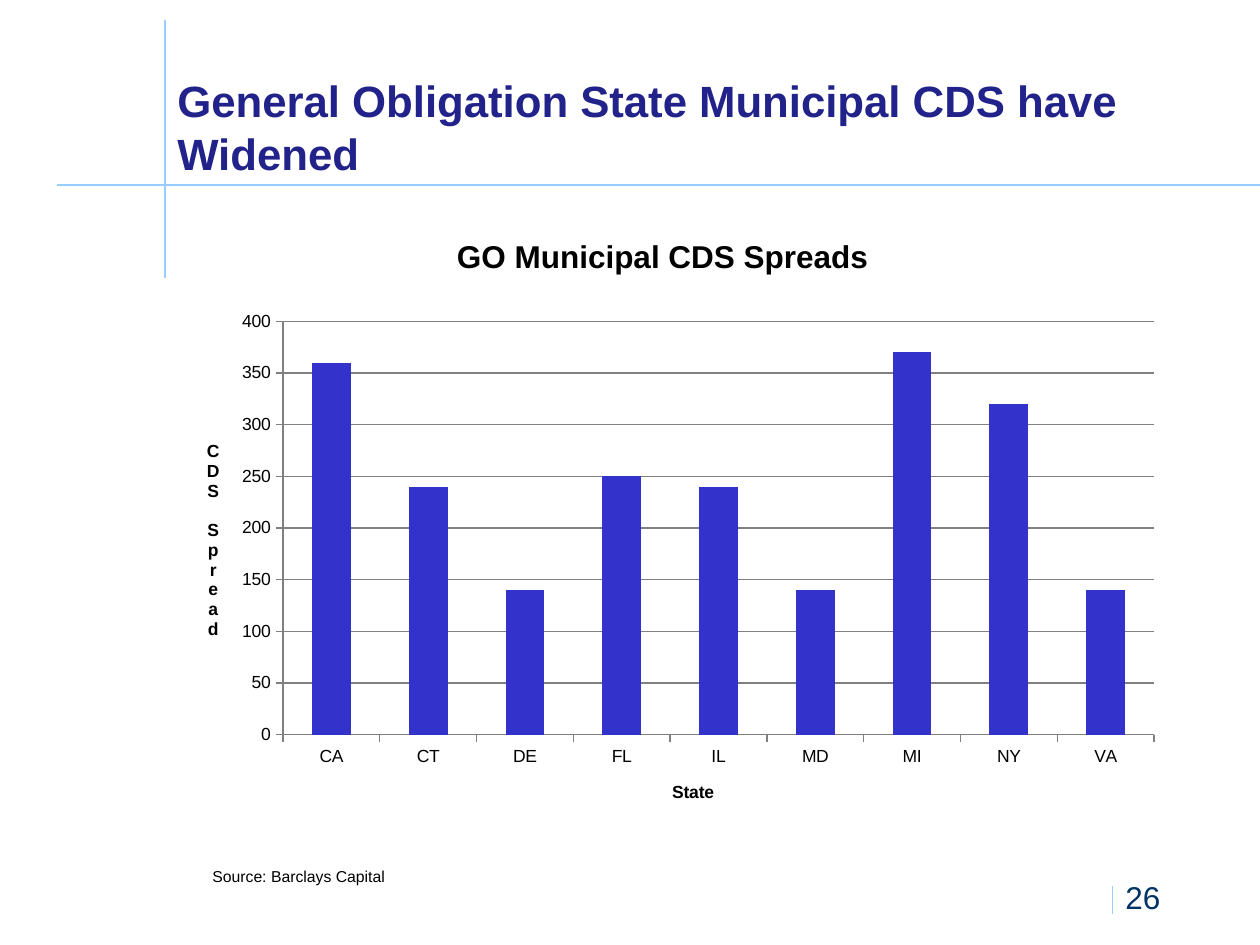
from lxml import etree
from pptx import Presentation
from pptx import util as u
from pptx.chart.data import CategoryChartData
from pptx.dml.color import RGBColor
from pptx.enum import chart as ch, shapes, text
from pptx.oxml import parse_xml
from pptx.oxml.ns import qn

SCALE = 914400 / 126
FONT = "Arial"
SKY = RGBColor(0x99, 0xCC, 0xFF)
NAVY = RGBColor(0x22, 0x22, 0x8B)
TEAL = RGBColor(0x00, 0x33, 0x66)
BLUE = RGBColor(0x33, 0x33, 0xCC)
GREY = RGBColor(0x80, 0x80, 0x80)
BLACK = RGBColor(0, 0, 0)
SPREADS = {"CA": 360, "CT": 240, "DE": 140, "FL": 250, "IL": 240,
           "MD": 140, "MI": 370, "NY": 320, "VA": 140}


def px(*vals):
    return [u.Emu(round(v * SCALE)) for v in vals]


def style(font, size, color, bold=False):
    font.name, font.size, font.bold = FONT, u.Pt(size), bold
    font.color.rgb = color


def add_line(slide, ends, width):
    line = slide.shapes.add_connector(shapes.MSO_CONNECTOR.STRAIGHT, *px(*ends))
    line.line.color.rgb = SKY
    line.line.width = u.Pt(width)
    etree.SubElement(line._element.spPr, qn("a:effectLst"))


def add_text(slide, area, words, size, color, bold=False,
             anchor=text.MSO_ANCHOR.TOP):
    frame = slide.shapes.add_textbox(*px(*area)).text_frame
    frame.word_wrap = True
    frame.vertical_anchor = anchor
    run = frame.paragraphs[0].add_run()
    run.text = words
    style(run.font, size, color, bold)


def layout(**parts):
    """Manual chart layout; each part is a fraction of the chart."""
    inner = '<c:layoutTarget val="inner"/>' if "w" in parts else ""
    modes = '<c:xMode val="edge"/><c:yMode val="edge"/>'
    vals = "".join(f'<c:{k} val="{v}"/>' for k, v in parts.items())
    return parse_xml(
        '<c:layout xmlns:c="http://schemas.openxmlformats.org/drawingml/2006/chart">'
        f"<c:manualLayout>{inner}{modes}{vals}</c:manualLayout></c:layout>")


def place(node, spot):
    for old in node.findall(qn("c:layout")):
        node.remove(old)
    tx = node.find(qn("c:tx"))
    node.insert(0 if tx is None else node.index(tx) + 1, spot)


def add_title(owner, words, size, x, y):
    owner.has_title = True
    title = owner.chart_title if hasattr(owner, "chart_title") else owner.axis_title
    run = title.text_frame.paragraphs[0].add_run()
    run.text = words
    style(run.font, size, BLACK, True)
    place(title._element, layout(x=x, y=y))
    return title


def add_bars(slide, area):
    data = CategoryChartData(number_format="#,##0")
    data.categories = list(SPREADS)
    data.add_series("CDS Spread", list(SPREADS.values()))
    chart = slide.shapes.add_chart(
        ch.XL_CHART_TYPE.COLUMN_CLUSTERED, *px(*area), data).chart
    style(chart.font, 10, BLACK)
    chart.has_legend = False

    # Bars
    plot = chart.plots[0]
    plot.vary_by_categories = False
    plot.gap_width = 150
    fill = plot.series[0].format.fill
    fill.solid()
    fill.fore_color.rgb = BLUE

    # Axes
    cat, val = chart.category_axis, chart.value_axis
    val.minimum_scale, val.maximum_scale, val.major_unit = 0, 400, 50
    val.has_major_gridlines = True
    for item in (cat, val, val.major_gridlines):
        item.format.line.color.rgb = GREY
        item.format.line.width = u.Pt(0.75)
    for axis in (cat, val):
        axis.major_tick_mark = ch.XL_TICK_MARK.OUTSIDE

    # Titles and plot area
    add_title(chart, "GO Municipal CDS Spreads", 18, 0.27, 0.01)
    add_title(cat, "State", 10, 0.49, 0.91)
    side = add_title(val, "CDS Spread", 10, 0.02, 0.35)
    body = side.text_frame._txBody.find(qn("a:bodyPr"))
    body.set("rot", "0")
    body.set("vert", "wordArtVert")
    place(chart._chartSpace.chart.plotArea, layout(x=0.1, y=0.16, w=0.88, h=0.68))


def main():
    deck = Presentation()
    deck.slide_width, deck.slide_height = px(1260, 945)
    slide = deck.slides.add_slide(deck.slide_layouts[6])

    # Frame lines
    add_line(slide, (1112, 886, 1112, 914), 0.5)
    add_line(slide, (57, 185, 1260, 185), 1)
    add_line(slide, (165, 278, 165, 20), 1)

    # Heading and chart
    add_text(slide, (165, 74, 1013, 105),
             "General Obligation State Municipal CDS have Widened",
             25, NAVY, True, text.MSO_ANCHOR.MIDDLE)
    add_bars(slide, (184, 224, 990, 608))

    # Footer
    add_text(slide, (200, 861, 494, 32), "Source: Barclays Capital", 9, BLACK)
    add_text(slide, (1113, 872, 84, 50), "26", 18, TEAL)
    deck.save("out.pptx")


if __name__ == "__main__":
    main()
